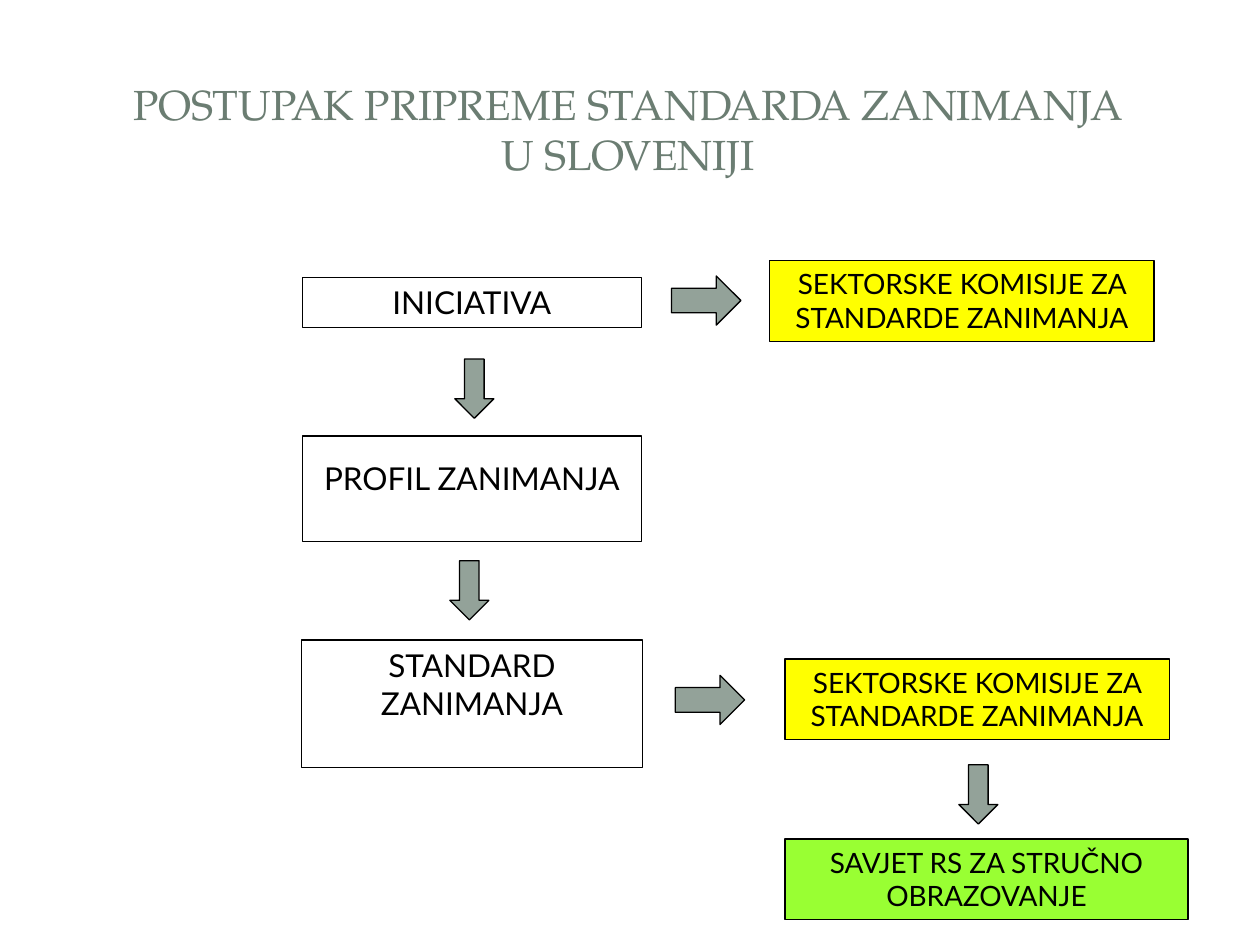
from pptx import Presentation
from pptx.dml.color import RGBColor
from pptx.enum.shapes import MSO_SHAPE
from pptx.enum.text import MSO_ANCHOR, PP_ALIGN
from pptx.util import Inches, Pt

RECTANGLE = MSO_SHAPE.RECTANGLE
DOWN, RIGHT = MSO_SHAPE.DOWN_ARROW, MSO_SHAPE.RIGHT_ARROW
TOP, MIDDLE = MSO_ANCHOR.TOP, MSO_ANCHOR.MIDDLE
CENTER = PP_ALIGN.CENTER

BLACK = RGBColor(0x00, 0x00, 0x00)
SLATE = RGBColor(0x6B, 0x7D, 0x72)
SAGE = RGBColor(0x93, 0xA2, 0x99)
YELLOW = RGBColor(0xFF, 0xFF, 0x00)
GREEN = RGBColor(0x99, 0xFF, 0x33)

COLUMNS, ROWS = 100, 75


def write_text(frame, text, *, size, font="Lato", color=BLACK, anchor=TOP, inset=0.05):
    frame.word_wrap = True
    frame.vertical_anchor = anchor
    frame.margin_top = Inches(inset)
    paragraph = frame.paragraphs[0]
    paragraph.text = text
    paragraph.alignment = CENTER
    for run in paragraph.runs:
        run.font.size = Pt(size)
        run.font.name = font
        run.font.color.rgb = color


class FlowSlide:
    outline = BLACK
    outline_width = Pt(0.75)
    arrow_length = {DOWN: (3.1, 4.7), RIGHT: (5.5, 3.9)}

    def __init__(self, presentation):
        self.slide = presentation.slides.add_slide(presentation.slide_layouts[6])
        self.column = presentation.slide_width / COLUMNS
        self.row = presentation.slide_height / ROWS

    def area(self, left, top, width, height):
        return (round(left * self.column), round(top * self.row),
                round(width * self.column), round(height * self.row))

    def title(self, text, *place):
        box = self.slide.shapes.add_textbox(*self.area(*place))
        write_text(box.text_frame, text, size=24, font="TeX Gyre Pagella",
                   color=SLATE, anchor=MIDDLE)

    def outlined(self, kind, place, fill):
        shape = self.slide.shapes.add_shape(kind, *self.area(*place))
        shape.shadow.inherit = False
        shape.line.color.rgb = self.outline
        shape.line.width = self.outline_width
        if fill is None:
            shape.fill.background()
        else:
            shape.fill.solid()
            shape.fill.fore_color.rgb = fill
        return shape

    def stage(self, text, *place, inset=0.05):
        box = self.outlined(RECTANGLE, place, None)
        write_text(box.text_frame, text, size=18, inset=inset)

    def body(self, text, fill, left, top, width):
        box = self.outlined(RECTANGLE, (left, top, width, 6.4), fill)
        write_text(box.text_frame, text, size=16)

    def arrow(self, direction, left, top):
        self.outlined(direction, (left, top, *self.arrow_length[direction]), SAGE)


def main():
    presentation = Presentation()
    presentation.slide_width = Inches(10)
    presentation.slide_height = Inches(7.5)
    flow = FlowSlide(presentation)

    flow.title("POSTUPAK PRIPREME STANDARDA ZANIMANJA\nU SLOVENIJI", 4.7, 4.5, 90.3, 11.4)

    flow.stage("INICIATIVA", 24, 22, 26.9, 4)
    flow.stage("PROFIL ZANIMANJA", 24, 34.6, 26.9, 8.4, inset=0.18)
    flow.stage("STANDARD ZANIMANJA", 23.9, 50.8, 27.1, 10.1)

    for left, top in ((61.1, 20.7), (62.3, 52.3)):
        flow.body("SEKTORSKE KOMISIJE ZA STANDARDE ZANIMANJA", YELLOW, left, top, 30.5)
    flow.body("SAVJET RS ZA STRUČNO OBRAZOVANJE", GREEN, 62.3, 66.6, 32)

    for left, top in ((36.1, 28.5), (35.7, 44.5), (76.1, 60.7)):
        flow.arrow(DOWN, left, top)
    for left, top in ((53.3, 21.9), (53.6, 53.6)):
        flow.arrow(RIGHT, left, top)

    presentation.save("out.pptx")


if __name__ == "__main__":
    main()
